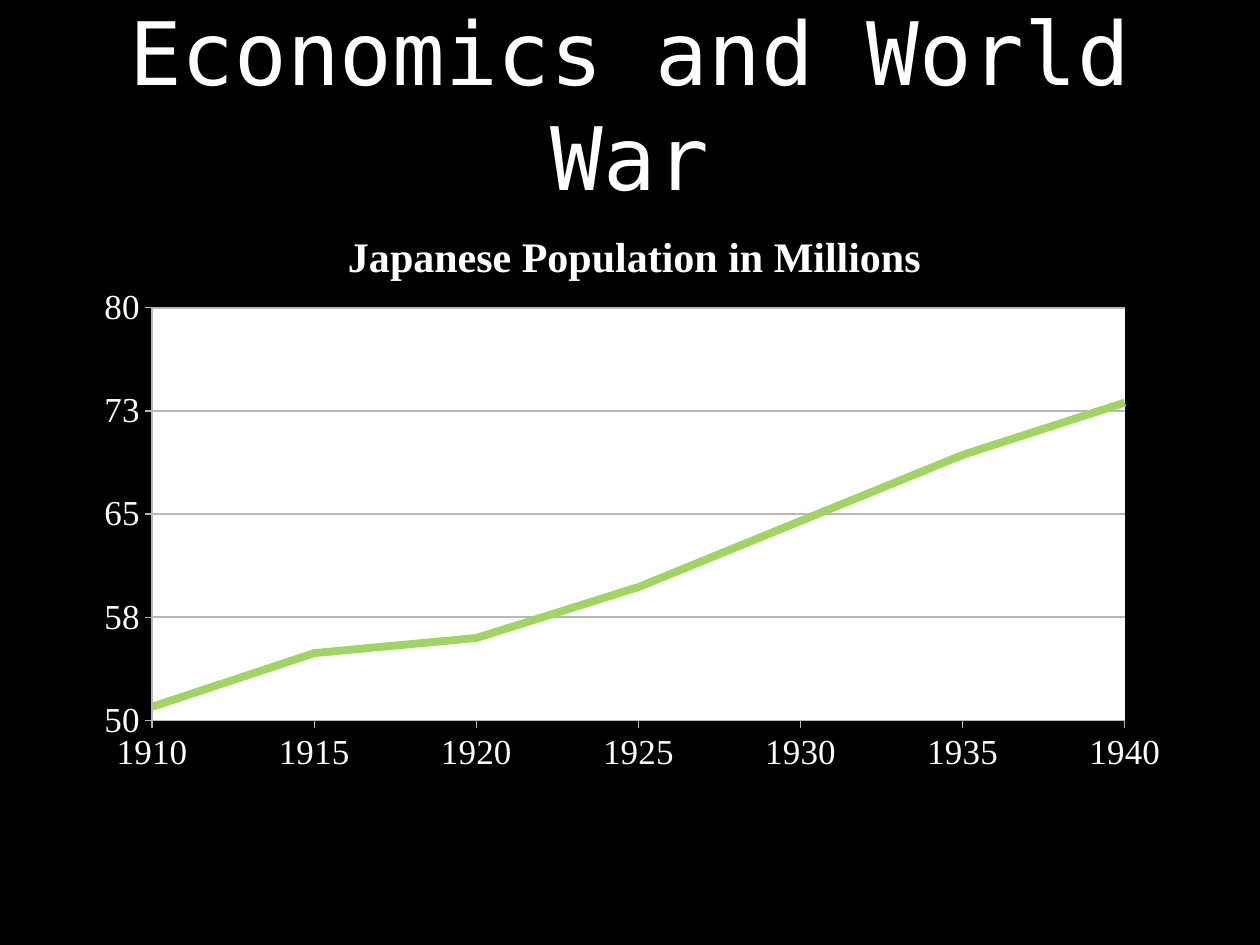
from pptx import Presentation
from pptx.chart.data import CategoryChartData
from pptx.dml.color import RGBColor
from pptx.enum.chart import XL_CHART_TYPE as ChartType, XL_TICK_LABEL_POSITION as LabelPosition, XL_TICK_MARK as TickMark
from pptx.enum.text import MSO_ANCHOR as Anchor, PP_ALIGN as Align
from pptx.oxml import parse_xml
from pptx.oxml.ns import nsdecls
from pptx.util import Pt


def color(value):
    return RGBColor.from_string(value)


def format_font(font, name, size, fill, bold=False):
    font.name, font.size, font.bold = name, Pt(size), bold
    font.color.rgb = color(fill)


SERIF = "Times New Roman"
CHART_TITLE = "Japanese Population in Millions"

deck = Presentation()
deck.slide_width, deck.slide_height = Pt(720), Pt(540)
page = deck.slides.add_slide(deck.slide_layouts[5])
page.background.fill.solid()
page.background.fill.fore_color.rgb = color("000000")

# Slide title
title = page.shapes.title
title.left, title.top, title.width, title.height = Pt(36), Pt(21.6), Pt(648), Pt(74.2)
box = title.text_frame
box.margin_left = box.margin_right = box.margin_top = box.margin_bottom = Pt(3)
box.vertical_anchor = Anchor.MIDDLE
box.word_wrap = True
para = box.paragraphs[0]
para.alignment = Align.CENTER
span = para.add_run()
span.text = "Economics and World War"
format_font(span.font, "DejaVu Sans Mono", 50, "FFFFFF")

# Population chart
data = CategoryChartData(number_format="General")
data.categories = [str(year) for year in range(1910, 1941, 5)]
data.add_series(CHART_TITLE, [51, 54.9, 56, 59.7, 64.5, 69.3, 73.1])
chart = page.shapes.add_chart(
    ChartType.LINE, Pt(48.2), Pt(126.7), Pt(614.9), Pt(323.3), data).chart
format_font(chart.font, "Comic Neue", 10, "FFFFFF")
chart.has_legend = False
chart.has_title = True
para = chart.chart_title.text_frame.paragraphs[0]
span = para.add_run()
span.text = CHART_TITLE
format_font(span.font, SERIF, 24, "FFFFFF", bold=True)

# Population line
series = chart.plots[0].series[0]
series.smooth = False
series.format.line.color.rgb = color("A1D562")
series.format.line.width = Pt(4.5)

# Axes and gridlines
years, millions = chart.category_axis, chart.value_axis
for axis, fill, number_format in ((years, "FAFFF9", "General"), (millions, "FCFFF5", "#,##0")):
    format_font(axis.tick_labels.font, SERIF, 20, fill)
    axis.tick_labels.number_format = number_format
    axis.tick_labels.number_format_is_linked = False
    axis.major_tick_mark, axis.minor_tick_mark = TickMark.OUTSIDE, TickMark.NONE
    axis.format.line.color.rgb = color("B7B7B7")
    axis.format.line.width = Pt(0.75)
years.tick_label_position = LabelPosition.LOW
millions.minimum_scale, millions.maximum_scale, millions.major_unit = 50, 80, 7.5
millions.has_major_gridlines = True
millions.major_gridlines.format.line.color.rgb = color("B7B7B7")
millions.major_gridlines.format.line.width = Pt(1)

# The line starts on the value axis
space = chart._chartSpace
for crossing in space.xpath(".//c:valAx/c:crossBetween"):
    crossing.getparent().remove(crossing)
space.xpath(".//c:valAx/c:crosses")[0].addnext(
    parse_xml(f'<c:crossBetween {nsdecls("c")} val="midCat"/>'))

# Chart title and plot area positions, as shares of the chart
chart_title = space.xpath("./c:chart/c:title")[0]
plot_area = space.xpath(".//c:plotArea")[0]
for part, index, places in (
        (chart_title, 1, {"xMode": "edge", "yMode": "edge", "x": 0.238, "y": 0}),
        (plot_area, 0, {"layoutTarget": "inner", "xMode": "edge", "yMode": "edge",
                        "x": 0.063, "y": 0.152, "w": 0.904, "h": 0.73})):
    for layout in part.xpath("./c:layout"):
        part.remove(layout)
    entries = "".join(f'<c:{key} val="{value}"/>' for key, value in places.items())
    part.insert(index, parse_xml(
        f'<c:layout {nsdecls("c")}><c:manualLayout>{entries}</c:manualLayout></c:layout>'))
for overlay in chart_title.xpath("./c:overlay"):
    overlay.set("val", "1")

# White plot area
plot_area.append(parse_xml(
    f'<c:spPr {nsdecls("c", "a")}><a:solidFill><a:srgbClr val="FFFFFF"/></a:solidFill></c:spPr>'))

deck.save("out.pptx")
